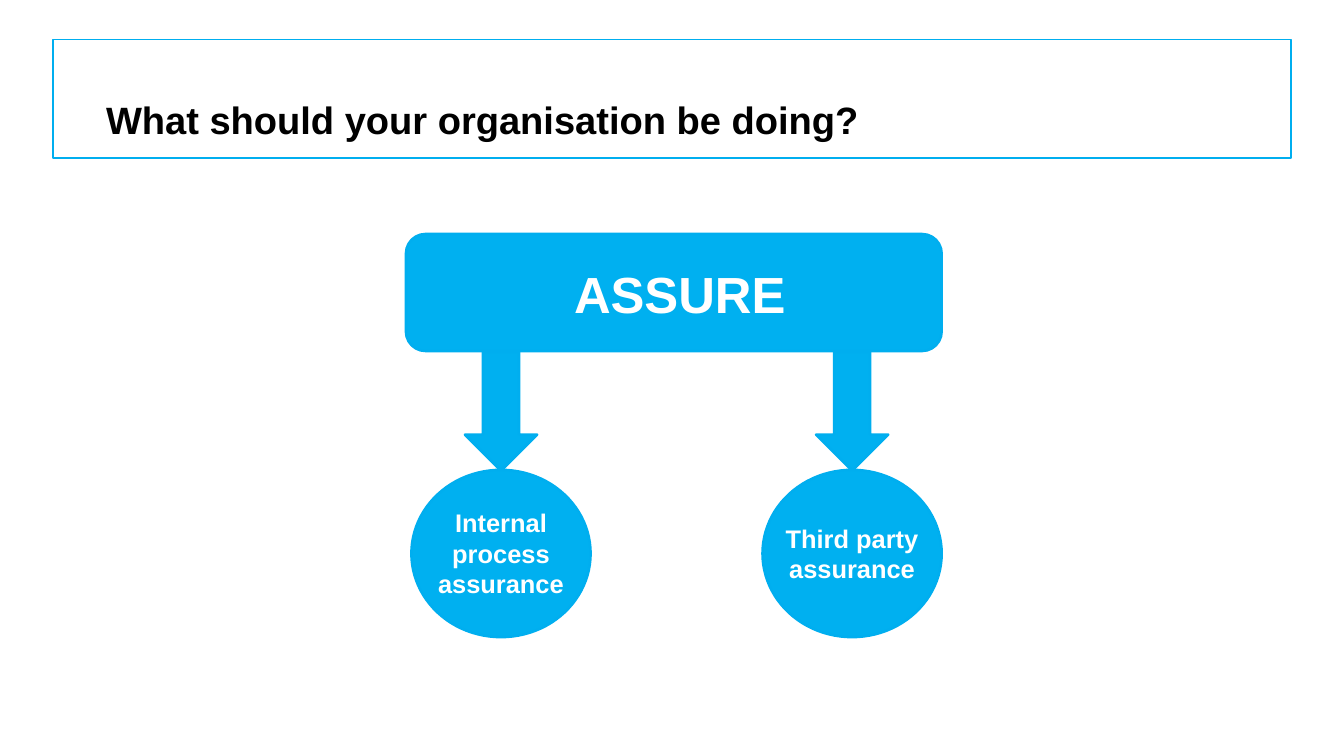
from pptx import Presentation, util as u
from pptx.dml.color import RGBColor
from pptx.enum import shapes, text

PX = 9144
SIZE = (1470, 827)
FONT = "Arial"
HUE = {"fill": "00B0F0", "line": "00AEEF", "ink": "000000", "pale": "FFFFFF"}
TITLE = "What should your organisation be doing?"
HEAD = "ASSURE"
PARTS = [
    ("Internal process assurance", 548, (163, 111)),
    ("Third party assurance", 932, (196, 77)),
]
ARROW = (79, 130, 385)
DISC = (196, 183, 514)
KIND = shapes.MSO_SHAPE

deck = Presentation()
deck.slide_width, deck.slide_height = (n * PX for n in SIZE)
slide = deck.slides.add_slide(deck.slide_layouts[6])


def tint(name):
    return RGBColor.from_string(HUE[name])


def shape(kind, x, y, w, h, fill="fill", width=2):
    item = slide.shapes.add_shape(kind, *(int(n * PX) for n in (x, y, w, h)))
    item.shadow.inherit = False
    if fill:
        item.fill.solid()
        item.fill.fore_color.rgb = tint(fill)
    else:
        item.fill.background()
    item.line.color.rgb = tint("line")
    item.line.width = u.Pt(width)
    return item


def label(words, x, y, w, h, size, ink="pale", align=text.PP_ALIGN.CENTER):
    box = slide.shapes.add_textbox(*(int(n * PX) for n in (x, y, w, h)))
    frame = box.text_frame
    frame.word_wrap = True
    frame.text = words
    para = frame.paragraphs[0]
    para.alignment = align
    font = para.runs[0].font
    font.name, font.size, font.bold = FONT, u.Pt(size), True
    font.color.rgb = tint(ink)
    return frame


shape(KIND.RECTANGLE, 58, 43, 1354, 130, None, 1)
title = label(TITLE, 116, 43, 1047, 113, 30, "ink", text.PP_ALIGN.LEFT)
title.vertical_anchor = text.MSO_ANCHOR.BOTTOM
title.margin_left = title.margin_right = 0
title.margin_top = title.margin_bottom = 0

shape(KIND.ROUNDED_RECTANGLE, 444, 256, 586, 128)
label(HEAD, 587, 282, 313, 77, 40)

for words, mid, (wide, high) in PARTS:
    for kind, (w, h, top) in ((KIND.DOWN_ARROW, ARROW), (KIND.OVAL, DISC)):
        shape(kind, mid - w / 2, top, w, h)
    centre = DISC[2] + DISC[1] / 2
    label(words, mid - wide / 2, centre - high / 2, wide, high, 20)

deck.save("out.pptx")
